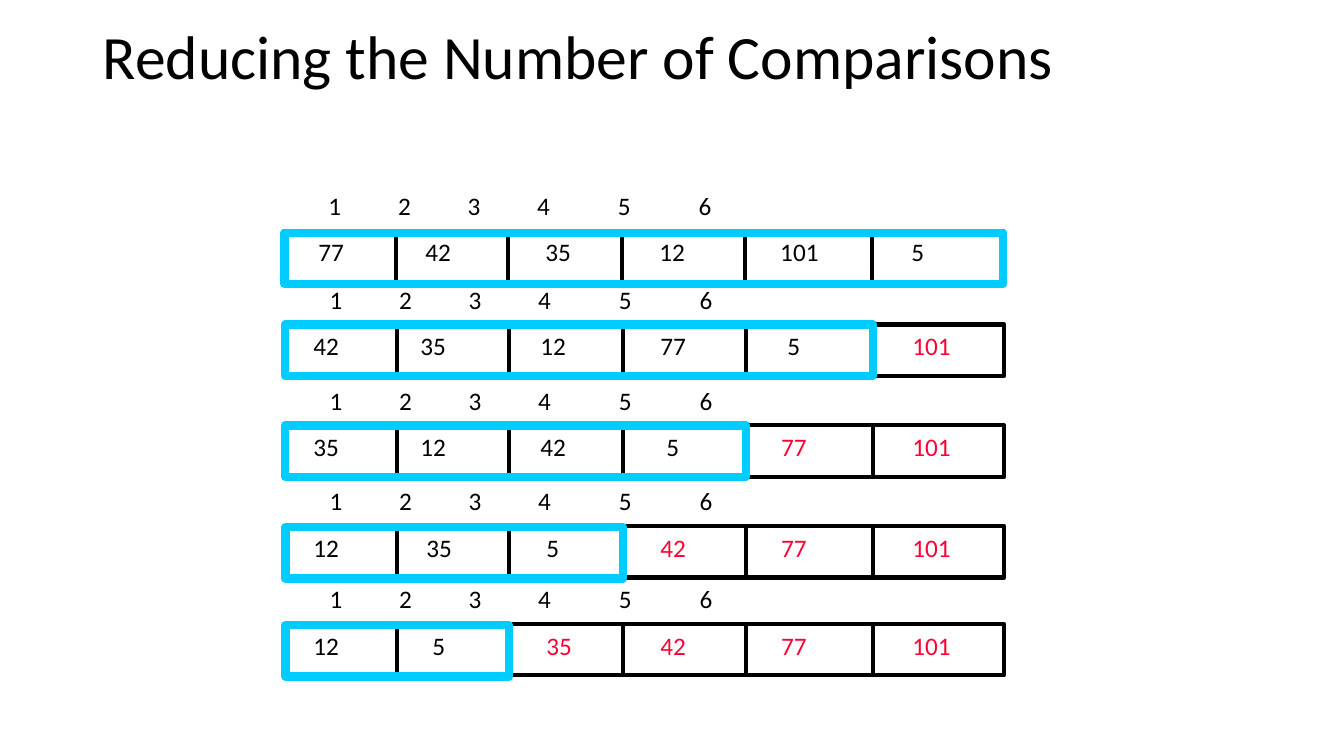
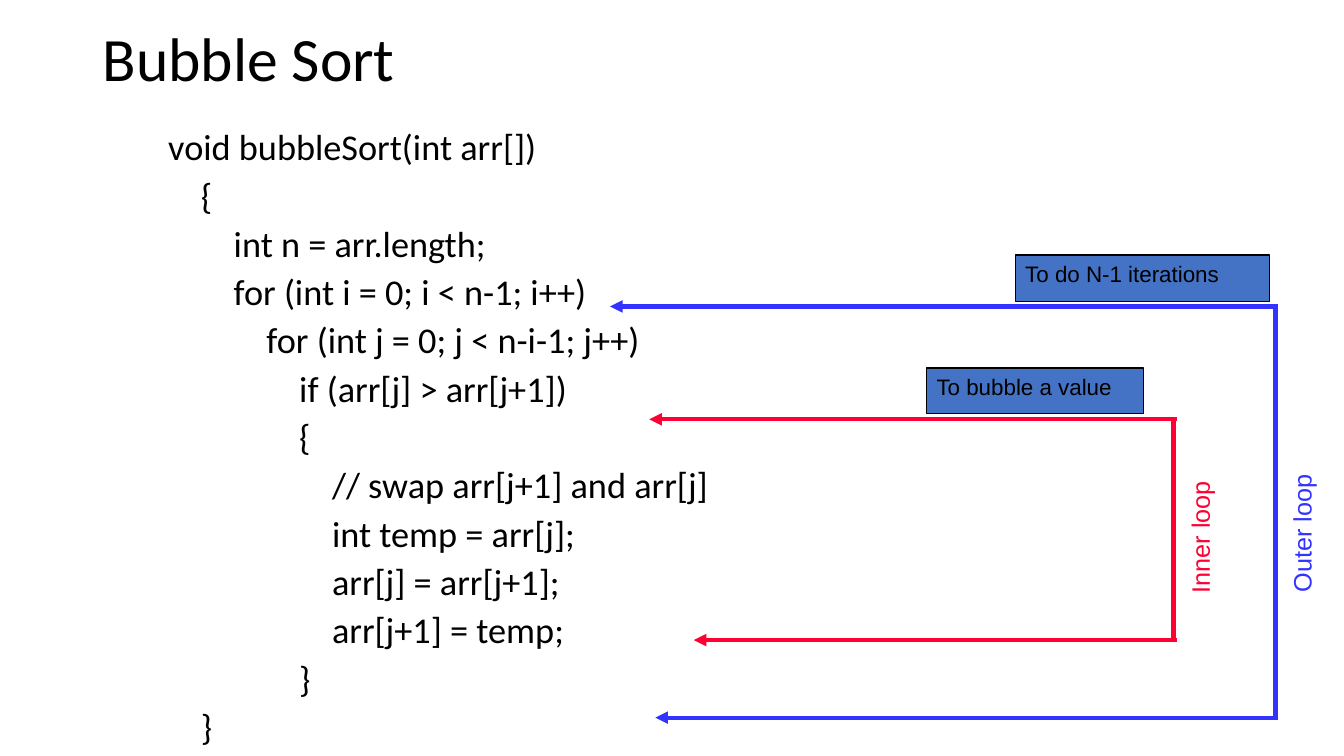
from lxml import etree
from pptx import Presentation
from pptx.dml.color import RGBColor
from pptx.enum.shapes import MSO_CONNECTOR, MSO_SHAPE
from pptx.enum.text import MSO_ANCHOR, PP_ALIGN
from pptx.oxml.ns import qn
from pptx.util import Pt

RECTANGLE = MSO_SHAPE.RECTANGLE
STRAIGHT = MSO_CONNECTOR.STRAIGHT
TOP, MIDDLE = MSO_ANCHOR.TOP, MSO_ANCHOR.MIDDLE
LEFT, CENTER = PP_ALIGN.LEFT, PP_ALIGN.CENTER

SCALE = 9144  # EMU per px, 100 px to the inch
PAGE_SIZE = (1333, 750)
BLACK, RED, CYAN, BLUE, STEEL = "000000", "FF0033", "00CCFF", "3333FF", "4472C4"
BODY_FONT, LABEL_FONT = "Calibri", "Arial"

# Array rows, all lengths from the left edge of the array
COLUMN_EDGES = (0, 111, 222, 335, 457, 583, 713)
VALUE_LEFTS = (18, 124, 243, 362, 476, 606)
INDEX_TABS = (69, 138, 207, 287, 367)
ROW_HEIGHT = 51
# left, top, drop of the frame, cells still unsorted, values, nudge of each value
ARRAY_ROWS = (
    (282, 229, 2, 6, (77, 42, 35, 12, 101, 5), (6, 6, 6, 0, 6, 6)),
    (283, 322, 0, 5, (42, 35, 12, 77, 5, 101), (0, 0, 0, 0, 12, 6)),
    (283, 422, 0, 4, (35, 12, 42, 5, 77, 101), (0, 0, 0, 6, 6, 6)),
    (283, 522, 1, 3, (12, 35, 5, 42, 77, 101), (0, 6, 6, 0, 6, 6)),
    (283, 619, 1, 2, (12, 5, 35, 42, 77, 101), (0, 12, 6, 0, 6, 6)),
)

CODE = """void bubbleSort(int arr[])
    {
        int n = arr.length;
        for (int i = 0; i < n-1; i++)
            for (int j = 0; j < n-i-1; j++)
                if (arr[j] > arr[j+1])
                {
                    // swap arr[j+1] and arr[j]
                    int temp = arr[j];
                    arr[j] = arr[j+1];
                    arr[j+1] = temp;
                }
    }"""


def px(*lengths):
    return [length * SCALE for length in lengths]


def color(hex_string):
    return RGBColor.from_string(hex_string)


def style_paragraph(para, size, font, ink, align=LEFT):
    para.alignment = align
    para.font.size = Pt(size)
    para.font.name = font
    para.font.color.rgb = color(ink)


def add_text(shapes, box, text, size, ink=BLACK, font=BODY_FONT,
             anchor=TOP, align=LEFT, wrap=True, spacing=None, before=0, tabs=()):
    shape = shapes.add_textbox(*px(*box))
    frame = shape.text_frame
    frame.word_wrap = wrap
    frame.vertical_anchor = anchor
    for number, line in enumerate(text.split("\n")):
        para = frame.add_paragraph() if number else frame.paragraphs[0]
        para.text = line
        if spacing:
            para.line_spacing = spacing
        if number and before:
            para.space_before = Pt(before)
        if tabs:
            stops = etree.SubElement(para._p.get_or_add_pPr(), qn("a:tabLst"))
            for position in tabs:
                etree.SubElement(stops, qn("a:tab"), pos=str(position * SCALE), algn="l")
        style_paragraph(para, size, font, ink, align)
    return shape


def add_rectangle(shapes, box, line, weight, fill=None):
    shape = shapes.add_shape(RECTANGLE, *px(*box))
    shape.shadow.inherit = False
    if fill:
        shape.fill.solid()
        shape.fill.fore_color.rgb = color(fill)
    else:
        shape.fill.background()
    shape.line.color.rgb = color(line)
    shape.line.width = Pt(weight)
    return shape


def add_line(shapes, start, end, ink, arrow=False):
    line = shapes.add_connector(STRAIGHT, *px(*start, *end))
    line.line.color.rgb = color(ink)
    line.line.width = Pt(3)
    if arrow:
        etree.SubElement(line.line._get_or_add_ln(), qn("a:tailEnd"), type="triangle")
    etree.SubElement(line._element.spPr, qn("a:effectLst"))


def add_title(page, text, top, height):
    add_text(page.shapes, (92, top, 1150, height), text, 44, anchor=MIDDLE, spacing=0.9)


def add_array_row(page, left, top, frame_drop, unsorted, values, nudges):
    shapes = page.shapes.add_group_shape().shapes
    # Cells
    add_rectangle(shapes, (left, top, COLUMN_EDGES[-1], ROW_HEIGHT), BLACK, 3)
    for edge in COLUMN_EDGES[1:-1]:
        add_line(shapes, (left + edge, top), (left + edge, top + ROW_HEIGHT), BLACK)
    # Index numbers above the cells
    indexes = "\t".join(str(number + 1) for number in range(len(values)))
    add_text(shapes, (left + 34, top - 45, 430, 40), indexes, 18, tabs=INDEX_TABS)
    # Values, with the sorted tail in red
    for number, (value, offset, nudge) in enumerate(zip(values, VALUE_LEFTS, nudges)):
        add_text(shapes, (left + offset + nudge, top + 1, 65, 40), str(value), 18,
                 BLACK if number < unsorted else RED)
    # Frame around the part still to compare
    add_rectangle(shapes, (left, top + frame_drop, COLUMN_EDGES[unsorted], ROW_HEIGHT), CYAN, 6)


def add_loop_bracket(page, spine, top, bottom, tips, ink, label, label_middle):
    for level, tip in zip((top, bottom), tips):
        add_line(page.shapes, (spine + 3, level), (tip, level), ink, arrow=True)
    add_line(page.shapes, (spine, top), (spine, bottom), ink)
    name = add_text(page.shapes, (spine + 26 - 69, label_middle - 20, 138, 40), label, 18,
                    ink, LABEL_FONT, align=CENTER, wrap=False)
    name.rotation = 270


def add_callout(page, box, text):
    shape = add_rectangle(page.shapes, box, BLACK, 1, STEEL)
    shape.text_frame.vertical_anchor = TOP
    para = shape.text_frame.paragraphs[0]
    para.text = text
    style_paragraph(para, 16, LABEL_FONT, BLACK)


def build_comparisons(page):
    add_title(page, "Reducing the Number of Comparisons", 16, 87)
    for row in ARRAY_ROWS:
        add_array_row(page, *row)


def build_code(page):
    add_text(page.shapes, (157, 127, 902, 633), CODE, 25.9, spacing=0.8, before=9.6)
    add_loop_bracket(page, 1164, 416, 635, (644, 688), RED, "Inner loop", 533)
    add_loop_bracket(page, 1265, 304, 712, (605, 650), BLUE, "Outer loop", 529)
    add_callout(page, (919, 365, 215, 45), "To bubble a value")
    add_callout(page, (1007, 253, 252, 46), "To do N-1 iterations")
    add_title(page, "Bubble Sort", 21, 81)


def main():
    deck = Presentation()
    deck.slide_width, deck.slide_height = px(*PAGE_SIZE)
    for build in (build_comparisons, build_code):
        build(deck.slides.add_slide(deck.slide_layouts[6]))
    deck.save("out.pptx")


if __name__ == "__main__":
    main()
